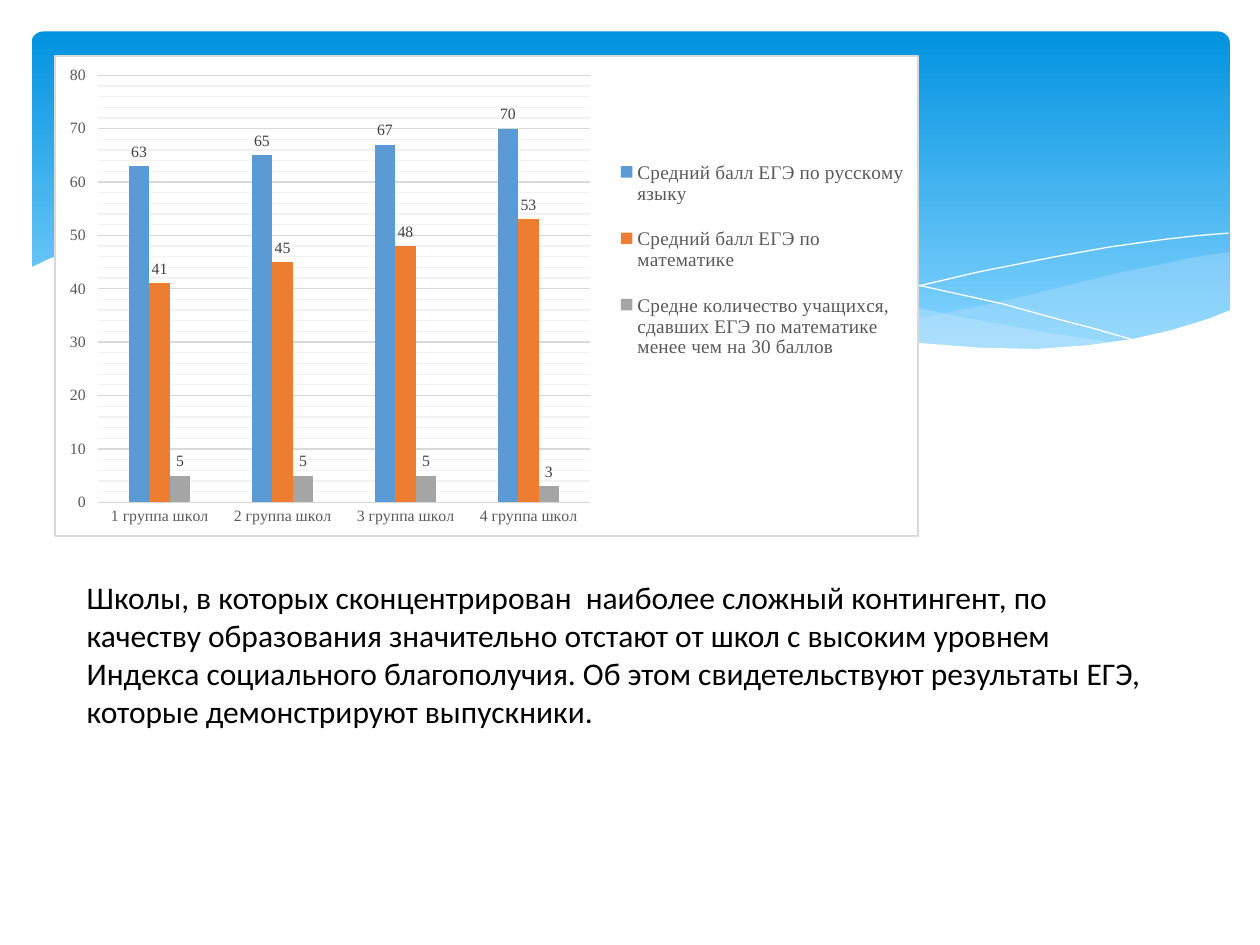
from dataclasses import dataclass

from pptx import Presentation
from pptx.chart.data import CategoryChartData
from pptx.dml.color import RGBColor
from pptx.enum.chart import XL_CHART_TYPE as ChartType
from pptx.enum.chart import XL_LABEL_POSITION as LabelPos
from pptx.enum.chart import XL_LEGEND_POSITION as LegendPos
from pptx.enum.chart import XL_TICK_MARK as Tick
from pptx.enum.shapes import MSO_SHAPE as Shape
from pptx.oxml import parse_xml
from pptx.oxml.ns import nsdecls, qn
from pptx.util import Pt


@dataclass(frozen=True)
class Theme:
    white: str = "FFFFFF"
    black: str = "000000"
    sky_top: str = "0293E0"
    sky_bottom: str = "83D3FE"
    wave: str = "C6E7FC"
    grid: str = "D9D9D9"
    minor_grid: str = "F2F2F2"
    axis_text: str = "595959"
    label_text: str = "404040"
    bars: tuple = ("5B9BD5", "ED7D31", "A5A5A5")
    body_font: str = "Calibri"
    chart_font: str = "Times New Roman"
    body_size: float = 18
    chart_size: float = 10
    axis_size: float = 9
    legend_size: float = 11


def rgb(value):
    return RGBColor.from_string(value)


def style_font(font, name, size, color):
    font.name, font.size = name, Pt(size)
    font.color.rgb = rgb(color)


def style_line(line, color, width=0.75):
    line.color.rgb = rgb(color)
    line.width = Pt(width)


def chart_sp_pr(line, fill=None):
    """Return a c:spPr element with a thin line and an optional fill."""
    def solid(color):
        return f'<a:solidFill><a:srgbClr val="{color}"/></a:solidFill>'
    return parse_xml(
        f'<c:spPr {nsdecls("c", "a")}>{solid(fill) if fill else ""}'
        f'<a:ln w="{Pt(0.75)}">{solid(line)}</a:ln></c:spPr>')


def manual_layout(x, y, w, h, inner=False):
    """Return a c:layout element; positions are fractions of the chart."""
    target = '<c:layoutTarget val="inner"/>' if inner else ""
    return parse_xml(
        f'<c:layout {nsdecls("c")}><c:manualLayout>{target}'
        '<c:xMode val="edge"/><c:yMode val="edge"/>'
        f'<c:x val="{x}"/><c:y val="{y}"/><c:w val="{w}"/><c:h val="{h}"/>'
        "</c:manualLayout></c:layout>")


class SlideBuilder:
    def __init__(self, prs, theme):
        self.theme = theme
        self.s = prs.slides.add_slide(prs.slide_layouts[6])

    def sky(self, x, y, w, h, radius):
        sp = self.s.shapes.add_shape(
            Shape.ROUNDED_RECTANGLE, Pt(x), Pt(y), Pt(w), Pt(h))
        sp.adjustments[0] = radius
        sp.shadow.inherit = False
        sp.line.fill.background()
        sp.fill.gradient()
        sp.fill.gradient_angle = 270
        colors = (self.theme.sky_top, self.theme.sky_bottom)
        for stop, pos, color in zip(sp.fill.gradient_stops, (0, 0.9), colors):
            stop.position = pos
            stop.color.rgb = rgb(color)

    def outline(self, points, closed):
        pts = [(Pt(x), Pt(y)) for x, y in points]
        builder = self.s.shapes.build_freeform(*pts[0])
        builder.add_line_segments(pts[1:], close=closed)
        sp = builder.convert_to_shape()
        sp.shadow.inherit = False
        return sp

    def wave(self, points, color, alpha=100):
        sp = self.outline(points, True)
        sp.line.fill.background()
        sp.fill.solid()
        sp.fill.fore_color.rgb = rgb(color)
        if alpha < 100:
            clr = sp._element.spPr.find(qn("a:solidFill"))[0]
            clr.append(parse_xml(
                f'<a:alpha {nsdecls("a")} val="{alpha * 1000}"/>'))

    def curve(self, points):
        sp = self.outline(points, False)
        sp.fill.background()
        style_line(sp.line, self.theme.white, 0)

    def column_chart(self, x, y, w, h, cats, series):
        t = self.theme
        data = CategoryChartData(number_format="#,##0")
        data.categories = cats
        for name, values in series:
            data.add_series(name, values)
        chart = self.s.shapes.add_chart(
            ChartType.COLUMN_CLUSTERED, Pt(x), Pt(y), Pt(w), Pt(h), data).chart
        style_font(chart.font, t.chart_font, t.chart_size, t.black)
        chart.has_title = False
        chart._chartSpace.find(qn("c:chart")).addnext(chart_sp_pr(t.grid, t.white))
        self.style_axes(chart)
        self.style_bars(chart.plots[0])

        chart.has_legend = True
        legend = chart.legend
        legend.position = LegendPos.RIGHT
        legend.include_in_layout = False
        style_font(legend.font, t.chart_font, t.legend_size, t.axis_text)
        for old in legend._element.findall(qn("c:layout")):
            legend._element.remove(old)
        legend._element.find(qn("c:legendPos")).addnext(
            manual_layout(0.65, 0.17, 0.34, 0.51))
        area = chart._chartSpace.find(".//" + qn("c:plotArea"))
        for old in area.findall(qn("c:layout")):
            area.remove(old)
        area.insert(0, manual_layout(0.05, 0.04, 0.57, 0.89, inner=True))

    def style_axes(self, chart):
        t = self.theme
        cat, val = chart.category_axis, chart.value_axis
        for axis in (cat, val):
            style_font(axis.tick_labels.font, t.chart_font, t.axis_size, t.axis_text)
        cat.major_tick_mark = Tick.NONE
        style_line(cat.format.line, t.grid)
        val.minimum_scale, val.maximum_scale = 0, 80
        val.major_unit, val.minor_unit = 10, 2
        val.major_tick_mark = Tick.OUTSIDE
        val.format.line.fill.background()
        val.has_major_gridlines = val.has_minor_gridlines = True
        style_line(val.major_gridlines.format.line, t.grid)
        val._element.find(qn("c:minorGridlines")).append(chart_sp_pr(t.minor_grid))

    def style_bars(self, plot):
        t = self.theme
        plot.gap_width, plot.overlap = 300, 0
        plot.vary_by_categories = False
        for ser, color in zip(plot.series, t.bars):
            ser.format.fill.solid()
            ser.format.fill.fore_color.rgb = rgb(color)
            labels = ser.data_labels
            labels.show_value = True
            labels.position = LabelPos.OUTSIDE_END
            style_font(labels.font, t.chart_font, t.axis_size, t.label_text)

    def text(self, x, y, w, h, content):
        t = self.theme
        tf = self.s.shapes.add_textbox(Pt(x), Pt(y), Pt(w), Pt(h)).text_frame
        tf.word_wrap = True
        r = tf.paragraphs[0].add_run()
        r.text = content
        style_font(r.font, t.body_font, t.body_size, t.black)


RIGHT_WAVE = [
    (702.7, 144), (682.6, 146.9), (663.1, 151.2), (641.5, 155.5), (619.9, 160.6),
    (579.6, 170.6), (542.2, 178.6), (508.3, 185), (475.9, 190.8), (507.6, 195.1),
    (536.4, 198), (562.3, 199.4), (586.1, 200.2), (614.9, 198.7), (640.1, 195.8),
    (663.1, 190.8), (683.3, 185), (702.7, 177.8)]
LONG_WAVE = [
    (643, 196.6), (602.6, 190.8), (558, 182.9), (508.3, 172.8), (452.9, 159.8),
    (409.7, 149.8), (370.1, 142.6), (334.8, 137.5), (302.4, 134.6), (259.9, 133.2),
    (225.4, 135.4), (205.9, 137.5), (246.2, 143.3), (290.9, 151.9), (323.3, 159.8),
    (381.6, 172.8), (432.7, 183.6), (478.8, 191.5), (519.8, 197.3), (556.6, 199.4),
    (589, 200.2), (617, 199.4)]
FALLING_CURVE = [
    (222.5, 140.4), (247.7, 136.8), (288.7, 134.6), (324, 135.4), (367.2, 138.2),
    (400.3, 141.8), (437.8, 146.9), (478.8, 153.4), (523.4, 162.7), (572.4, 173.5),
    (598.3, 180.7), (625.7, 187.9), (653, 195.8)]
RISING_CURVE = [
    (441.4, 185), (483.8, 173.5), (518.4, 164.9), (558.7, 155.5), (601.9, 146.9),
    (634.3, 141.1), (665.3, 136.8), (684.7, 134.6), (702, 133.2)]
WHITE_WAVE = [
    (703.4, 177.1), (690.5, 182.2), (669.6, 188.6), (647.3, 193.7), (621.4, 197.3),
    (592.6, 199.4), (560.2, 198.7), (522.7, 195.8), (481, 190.8), (434.2, 182.9),
    (380.9, 172.1), (321.8, 158.4), (262.8, 145.4), (210.2, 136.8), (165.6, 133.2),
    (127.4, 132.5), (85.7, 134.6), (54.7, 140.4), (28.8, 147.6), (16.6, 153.4),
    (16.6, 236.9), (703.4, 236.9)]

CATEGORIES = [f"{n} группа школ" for n in range(1, 5)]
SCORES = [
    ("Средний балл ЕГЭ по русскому языку", (63, 65, 67, 70)),
    ("Средний балл ЕГЭ по математике", (41, 45, 48, 53)),
    ("Средне количество учащихся, сдавших ЕГЭ по математике менее чем на 30 баллов",
     (5, 5, 5, 3))]
CONCLUSION = (
    "Школы, в которых сконцентрирован  наиболее сложный контингент, по качеству "
    "образования значительно отстают от школ с высоким уровнем Индекса социального "
    "благополучия. Об этом свидетельствуют результаты ЕГЭ, которые демонстрируют "
    "выпускники.")

prs = Presentation()
prs.slide_width, prs.slide_height = Pt(720), Pt(540)
theme = Theme()
b = SlideBuilder(prs, theme)
b.sky(18, 18, 684.7, 194.4, 0.034)
b.wave(RIGHT_WAVE, theme.wave, 29)
b.wave(LONG_WAVE, theme.wave, 40)
b.curve(FALLING_CURVE)
b.curve(RISING_CURVE)
b.wave(WHITE_WAVE, theme.white)
b.column_chart(31, 31.7, 493.9, 275, CATEGORIES, SCORES)
b.text(42.5, 326.9, 629.3, 94.3, CONCLUSION)
prs.save("out.pptx")
